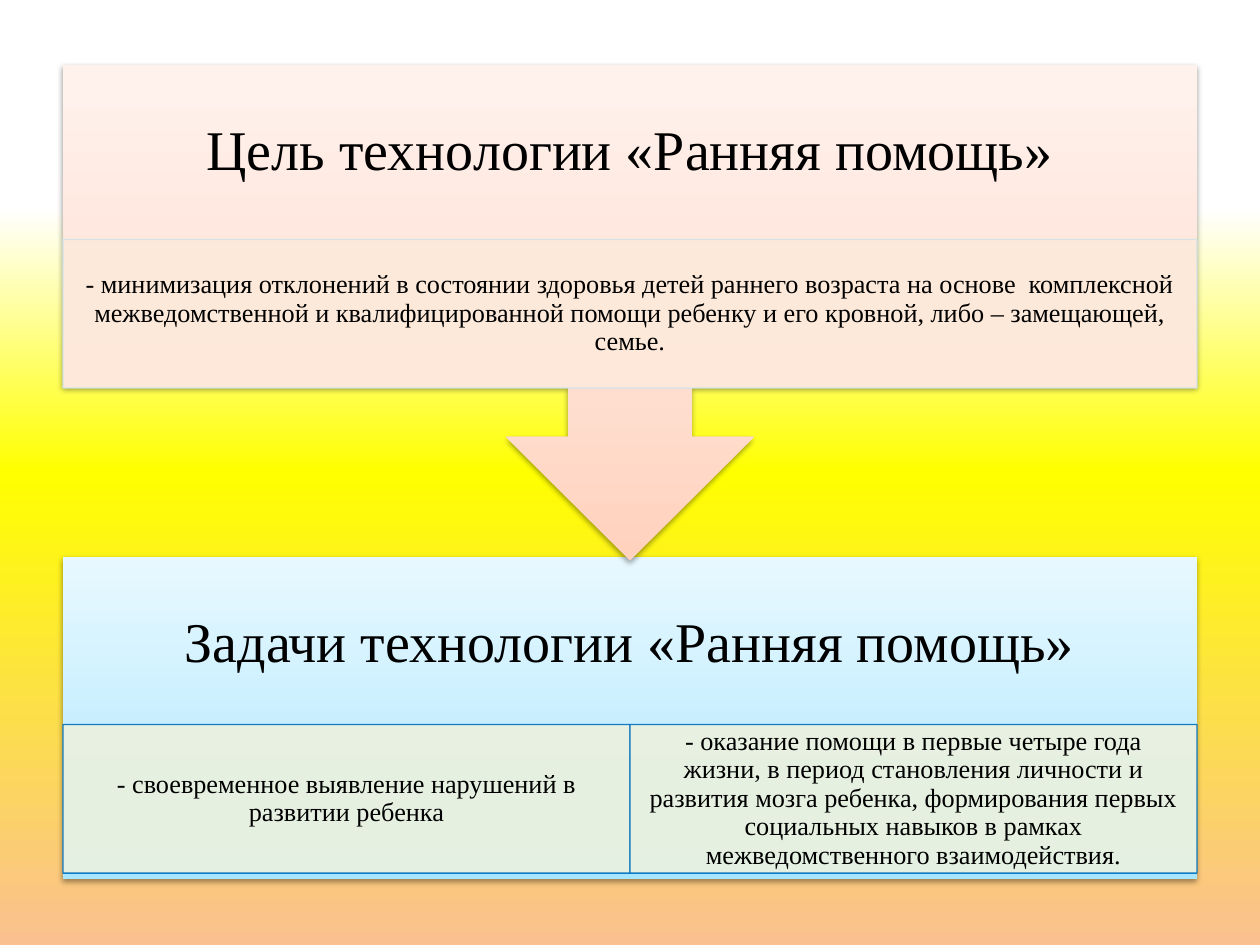
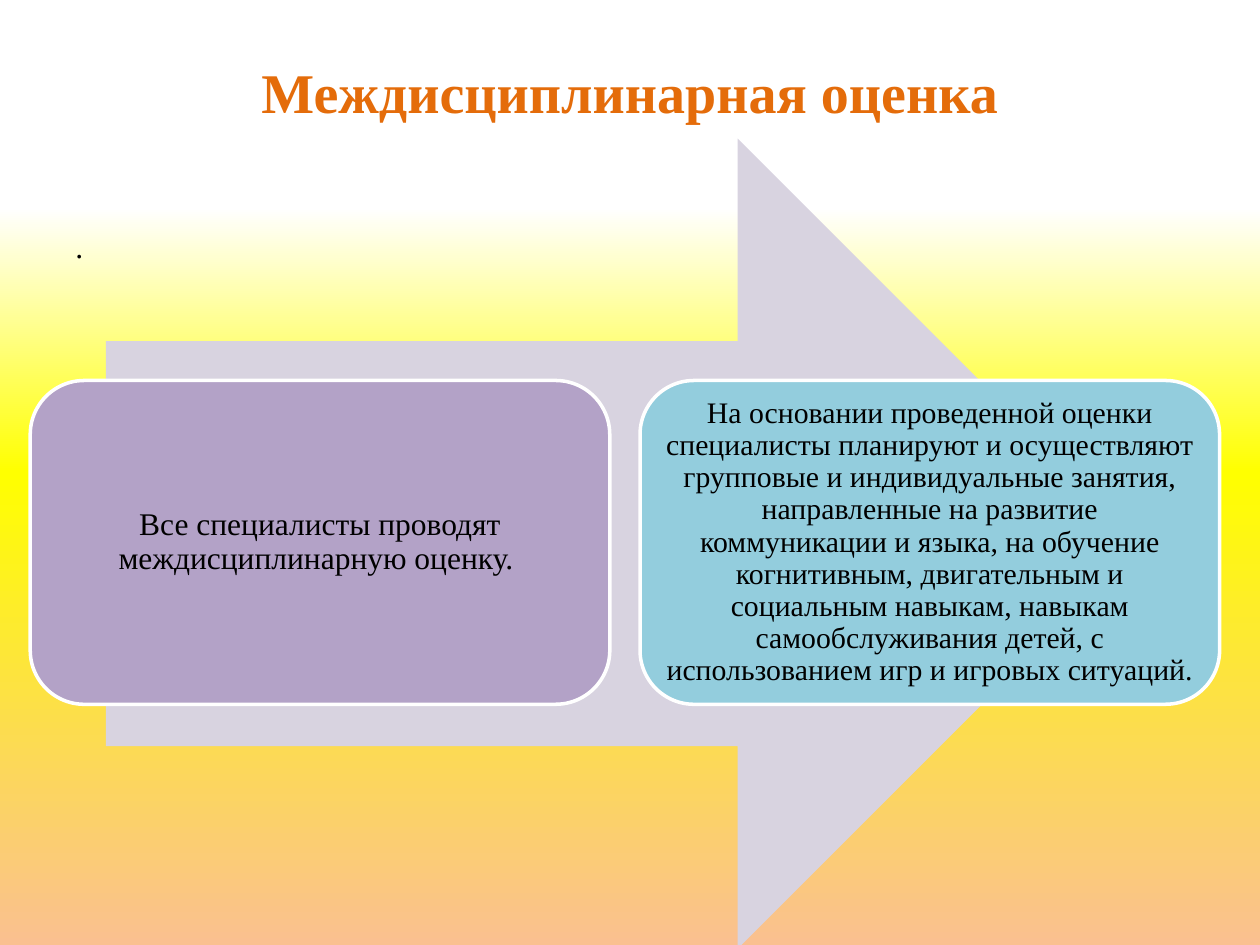
from pptx import Presentation
from pptx.dml.color import RGBColor
from pptx.enum.shapes import MSO_SHAPE as Shape
from pptx.enum.text import MSO_ANCHOR as Anchor, PP_ALIGN as Align
from pptx.oxml.ns import qn
from pptx.util import Emu, Pt
from lxml.etree import SubElement

PX = 9144  # EMU in one px, 100 px to the inch
FONT = "Times New Roman"
BLACK = RGBColor(0x00, 0x00, 0x00)
WHITE = RGBColor(0xFF, 0xFF, 0xFF)
YELLOW = RGBColor(0xFF, 0xFF, 0x00)
PEACH = RGBColor(0xFA, 0xC0, 0x90)
ORANGE = RGBColor(0xE4, 0x6C, 0x0A)
CREAM = RGBColor(0xFD, 0xEA, 0xDA)
PALE_BLUE = RGBColor(0xD0, 0xE3, 0xEA)
PALE_GREEN = RGBColor(0xEB, 0xF1, 0xDE)
BLUE = RGBColor(0x00, 0x70, 0xC0)
LILAC = RGBColor(0xD8, 0xD3, 0xE0)
PURPLE = RGBColor(0xB3, 0xA2, 0xC7)
AQUA = RGBColor(0x93, 0xCD, 0xDD)

# Gradients: (position in percent, colour)
BACKDROP = [(22, WHITE), (50, YELLOW), (100, PEACH)]
GOAL_STOPS = [(0, RGBColor(0xFF, 0xD2, 0xBD)), (35, RGBColor(0xFF, 0xDE, 0xD0)),
              (100, RGBColor(0xFF, 0xF2, 0xED))]
TASK_STOPS = [(0, RGBColor(0xA7, 0xE6, 0xFF)), (35, RGBColor(0xC1, 0xED, 0xFF)),
              (100, RGBColor(0xE7, 0xF8, 0xFF))]
UPWARD, DOWNWARD = 90, 270

# Shared grid
LEFT, WIDTH = 50, 900
HEADING_H, DETAIL_H = 138, 118


def px(*lengths):
    return [Emu(length * PX) for length in lengths]


def add_alpha(color, percent):
    SubElement(color, qn("a:alpha")).set("val", str(percent * 1000))


def paint_gradient(fill, owner, stops, angle):
    fill.gradient()
    fill.gradient_angle = angle
    stop_list = next(owner.iter(qn("a:gsLst")))
    for old in list(stop_list):
        stop_list.remove(old)
    for position, color in stops:
        stop = SubElement(stop_list, qn("a:gs"), pos=str(position * 1000))
        SubElement(stop, qn("a:srgbClr"), val=str(color))


def add_slide(prs):
    slide = prs.slides.add_slide(prs.slide_layouts[6])
    paint_gradient(slide.background.fill, slide.element, BACKDROP, DOWNWARD)
    return slide


def write(holder, text, size, color=BLACK, bold=False, align=Align.CENTER,
          anchor=Anchor.MIDDLE, insets=(10, 5), spacing=None):
    frame = holder.text_frame
    frame.word_wrap = True
    frame.vertical_anchor = anchor
    frame.margin_left, frame.margin_top = px(*insets)
    frame.margin_right, frame.margin_bottom = px(*insets)
    paragraph = frame.paragraphs[0]
    paragraph.text = text
    paragraph.alignment = align
    paragraph.line_spacing = spacing
    font = paragraph.font
    font.name, font.size, font.bold = FONT, Pt(size), bold
    font.color.rgb = color


def add_text(slide, box, text, size, **style):
    write(slide.shapes.add_textbox(*px(*box)), text, size, **style)


def add_figure(slide, kind, box, fill=None, line=None, line_width=0.75):
    figure = slide.shapes.add_shape(kind, *px(*box))
    if fill is not None:
        figure.fill.solid()
        figure.fill.fore_color.rgb = fill
    if line is None:
        figure.line.fill.background()
    else:
        figure.line.color.rgb = line
        figure.line.width = Pt(line_width)
    figure.shadow.inherit = False
    return figure


def add_block(slide, kind, top, height, stops, heading):
    """Gradient block with a soft shadow and a heading in its upper part."""
    block = add_figure(slide, kind, (LEFT, top, WIDTH, height))
    properties = block.element.spPr
    paint_gradient(block.fill, properties, stops, UPWARD)
    shadow = SubElement(properties.find(qn("a:effectLst")), qn("a:outerShdw"),
                        blurRad=str(Pt(3.1)), dist=str(Pt(1.6)),
                        dir="5400000", rotWithShape="0")
    add_alpha(SubElement(shadow, qn("a:srgbClr"), val=str(BLACK)), 38)
    add_text(slide, (LEFT, top, WIDTH, HEADING_H), heading, 32,
             insets=(25, 25), spacing=0.9)


def add_details(slide, top, fill, line, texts):
    """Row of equal, slightly see-through cells."""
    width = WIDTH // len(texts)
    for column, text in enumerate(texts):
        box = (LEFT + column * width, top, width, DETAIL_H)
        cell = add_figure(slide, Shape.RECTANGLE, box, fill, line)
        for color in cell.element.spPr.iter(qn("a:srgbClr")):
            add_alpha(color, 90)
        write(cell, text, 15, insets=(12, 2), spacing=0.9)


def build_goal_slide(prs):
    slide = add_slide(prs)
    # Tasks
    add_block(slide, Shape.RECTANGLE, 442, 256, TASK_STOPS,
              "Задачи технологии «Ранняя помощь»")
    add_details(slide, 575, PALE_GREEN, BLUE, [
        "- своевременное выявление нарушений в развитии ребенка",
        "- оказание помощи в первые четыре года жизни, в период становления "
        "личности и развития мозга ребенка, формирования первых социальных "
        "навыков в рамках межведомственного взаимодействия."])
    # Goal, pointing down at the tasks
    add_block(slide, Shape.DOWN_ARROW_CALLOUT, 52, 393, GOAL_STOPS,
              "Цель технологии «Ранняя помощь»")
    add_details(slide, 190, CREAM, PALE_BLUE, [
        "- минимизация отклонений в состоянии здоровья детей раннего возраста "
        "на основе  комплексной межведомственной и квалифицированной помощи "
        "ребенку и его кровной, либо – замещающей, семье."])


def build_assessment_slide(prs):
    slide = add_slide(prs)
    # Title and body
    add_text(slide, (LEFT, 30, WIDTH, 85), "Междисциплинарная оценка", 32,
             color=ORANGE, bold=True)
    add_text(slide, (LEFT, 175, WIDTH, 495), ".", 18, align=Align.JUSTIFY,
             anchor=Anchor.TOP)
    # Process arrow with its two steps
    add_figure(slide, Shape.RIGHT_ARROW, (84, 110, 823, 643), LILAC)
    steps = [
        (PURPLE, 18, "Все специалисты проводят междисциплинарную оценку. "),
        (AQUA, 17,
         "На основании проведенной оценки специалисты планируют и осуществляют "
         "групповые и индивидуальные занятия, направленные на развитие "
         "коммуникации и языка, на обучение когнитивным, двигательным и "
         "социальным навыкам, навыкам самообслуживания детей, с "
         "использованием игр и игровых ситуаций."),
    ]
    for index, (fill, size, text) in enumerate(steps):
        step = add_figure(slide, Shape.ROUNDED_RECTANGLE,
                          (24 + index * 484, 302, 460, 257), fill, WHITE, 2)
        write(step, text, size, insets=(7, 7), spacing=0.9)


def main():
    prs = Presentation()
    prs.slide_width, prs.slide_height = px(1000, 750)
    build_goal_slide(prs)
    build_assessment_slide(prs)
    prs.save("out.pptx")


if __name__ == "__main__":
    main()
